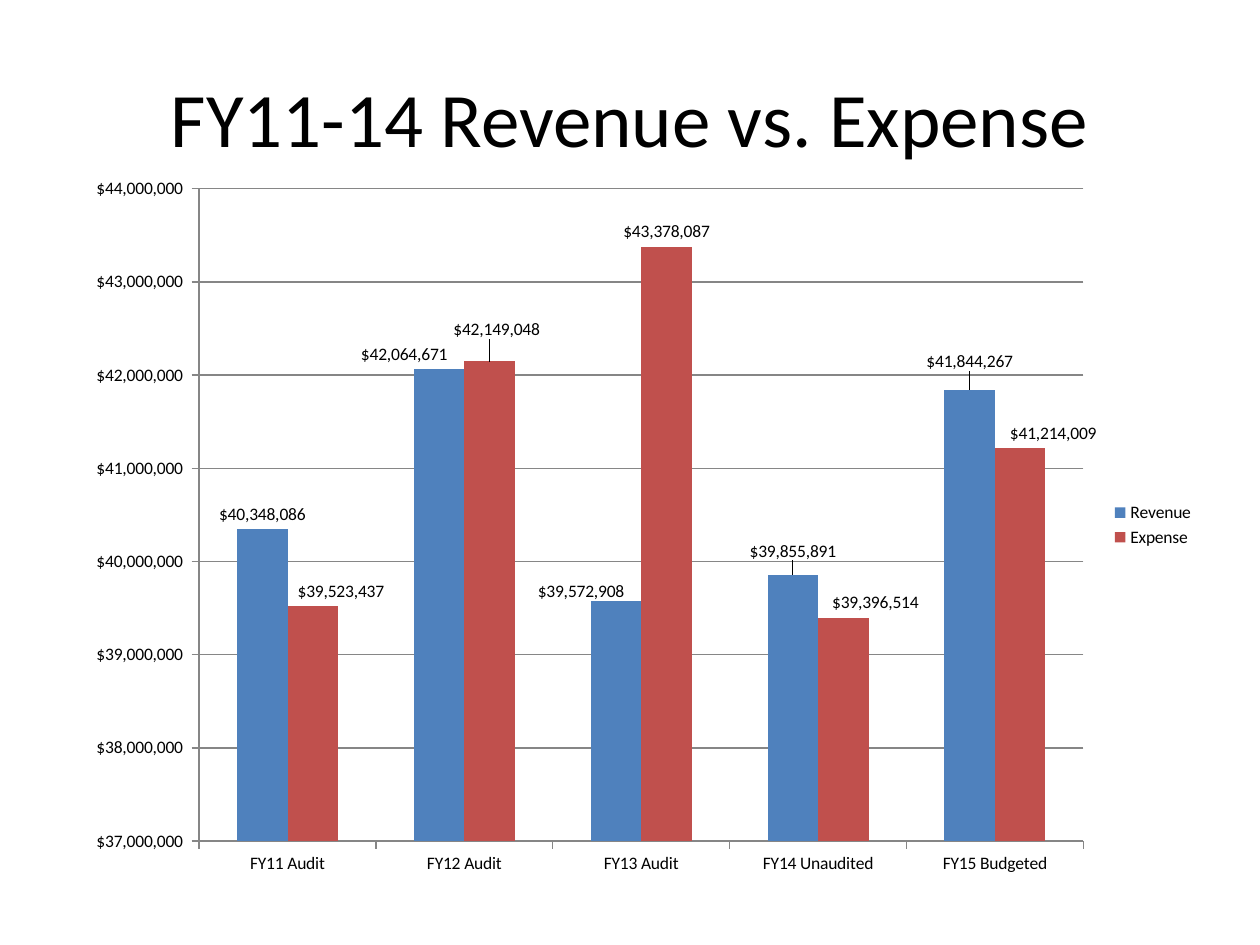
from dataclasses import dataclass, field

from lxml.etree import SubElement
from pptx import Presentation
from pptx.chart.data import CategoryChartData
from pptx.dml.color import RGBColor
from pptx.enum.chart import XL_CHART_TYPE, XL_LABEL_POSITION, XL_LEGEND_POSITION, XL_TICK_MARK
from pptx.enum.text import MSO_ANCHOR, PP_ALIGN
from pptx.oxml import parse_xml
from pptx.oxml.ns import nsdecls, qn
from pptx.util import Emu, Pt

EMU_PER_PX = 914400 / 126
FONT = "Calibri"
BLACK = "000000"
GRID_GRAY = "868686"
DOLLARS = '_("$"* #,##0_);_("$"* \\(#,##0\\);_("$"* "-"??_);_(@_)'
YEARS = ("FY11 Audit", "FY12 Audit", "FY13 Audit", "FY14 Unaudited", "FY15 Budgeted")


@dataclass(frozen=True)
class Box:
    """A rectangle in px."""

    left: int
    top: int
    width: int
    height: int


@dataclass(frozen=True)
class Measure:
    """A chart series, with label shifts in px by point index."""

    name: str
    color: str
    amounts: tuple[int, ...]
    label_shifts: dict[int, tuple[int, int]] = field(default_factory=dict)


TITLE_BOX = Box(63, 38, 1134, 158)
CHART_BOX = Box(63, 168, 1144, 714)
MEASURES = (
    Measure("Revenue", "4F81BD", (40348086, 42064671, 39572908, 39855891, 41844267),
            {1: (-35, 0), 2: (-35, 5), 3: (0, -9), 4: (0, -13)}),
    Measure("Expense", "C0504D", (39523437, 42149048, 43378087, 39396514, 41214009),
            {0: (28, 0), 1: (7, -17), 3: (32, 0), 4: (33, 0)}),
)


def px(length: int) -> Emu:
    """Turn px into EMU."""
    return Emu(round(length * EMU_PER_PX))


def rgb(color: str) -> RGBColor:
    """Turn a hex string into a colour."""
    return RGBColor.from_string(color)


def layout_xml(**settings: object):
    """Build a manual chart layout."""
    layout = parse_xml(f"<c:layout {nsdecls('c')}><c:manualLayout/></c:layout>")
    for tag, setting in settings.items():
        SubElement(layout[0], qn(f"c:{tag}")).set("val", str(setting))
    return layout


def set_title(title, text: str, box: Box) -> None:
    """Place and format the slide title."""
    title.left, title.top = px(box.left), px(box.top)
    title.width, title.height = px(box.width), px(box.height)
    title.text_frame.text = text
    title.text_frame.vertical_anchor = MSO_ANCHOR.MIDDLE
    paragraph = title.text_frame.paragraphs[0]
    paragraph.alignment = PP_ALIGN.CENTER
    font = paragraph.runs[0].font
    font.name, font.size = FONT, Pt(44)
    font.color.rgb = rgb(BLACK)


def style_axis(axis) -> None:
    """Give an axis its gray line and outside ticks."""
    axis.major_tick_mark = XL_TICK_MARK.OUTSIDE
    axis.minor_tick_mark = XL_TICK_MARK.NONE
    axis.format.line.color.rgb = rgb(GRID_GRAY)
    axis.format.line.width = Pt(0.75)


def style_series(series, measure: Measure, box: Box) -> None:
    """Colour a series and place its labels."""
    series.format.fill.solid()
    series.format.fill.fore_color.rgb = rgb(measure.color)
    series.invert_if_negative = False
    labels = series.data_labels
    labels.show_value = True
    labels.number_format = DOLLARS
    labels.number_format_is_linked = False
    labels.position = XL_LABEL_POSITION.OUTSIDE_END
    for index, (right, down) in measure.label_shifts.items():
        series.points[index].data_label.position = XL_LABEL_POSITION.OUTSIDE_END
        label = labels._element.xpath(f"c:dLbl[c:idx/@val='{index}']")[0]
        label.insert(1, layout_xml(x=round(right / box.width, 4), y=round(down / box.height, 4)))


def add_budget_chart(slide, measures: tuple[Measure, ...], box: Box) -> None:
    """Add the clustered column chart."""
    budget = CategoryChartData(number_format=DOLLARS)
    budget.categories = YEARS
    for measure in measures:
        budget.add_series(measure.name, measure.amounts)
    chart = slide.shapes.add_chart(
        XL_CHART_TYPE.COLUMN_CLUSTERED, px(box.left), px(box.top),
        px(box.width), px(box.height), budget).chart
    chart.has_title = False
    chart.font.name, chart.font.size = FONT, Pt(10)
    chart.font.color.rgb = rgb(BLACK)
    chart.has_legend = True
    chart.legend.position = XL_LEGEND_POSITION.RIGHT
    chart.legend.include_in_layout = False

    style_axis(chart.category_axis)
    amounts = chart.value_axis
    style_axis(amounts)
    amounts.minimum_scale, amounts.maximum_scale = 37_000_000, 44_000_000
    amounts.major_unit = 1_000_000
    amounts.tick_labels.number_format = DOLLARS
    amounts.tick_labels.number_format_is_linked = False
    amounts.has_major_gridlines = True
    amounts.major_gridlines.format.line.color.rgb = rgb(GRID_GRAY)
    amounts.major_gridlines.format.line.width = Pt(0.75)

    columns = chart.plots[0]
    columns.gap_width = 150
    columns.vary_by_categories = False
    for series, measure in zip(columns.series, measures):
        style_series(series, measure, box)

    plot_area = chart._chartSpace.chart.plotArea
    for layout in plot_area.findall(qn("c:layout")):
        plot_area.remove(layout)
    plot_area.insert(0, layout_xml(layoutTarget="inner", xMode="edge", yMode="edge",
                                   x=0.119, y=0.029, w=0.773, h=0.914))


def main() -> None:
    """Build and save the slide."""
    presentation = Presentation()
    presentation.slide_width, presentation.slide_height = px(1260), px(945)
    slide = presentation.slides.add_slide(presentation.slide_layouts.get_by_name("Title Only"))
    set_title(slide.shapes.title, "FY11-14 Revenue vs. Expense", TITLE_BOX)
    add_budget_chart(slide, MEASURES, CHART_BOX)
    presentation.save("out.pptx")


if __name__ == "__main__":
    main()
